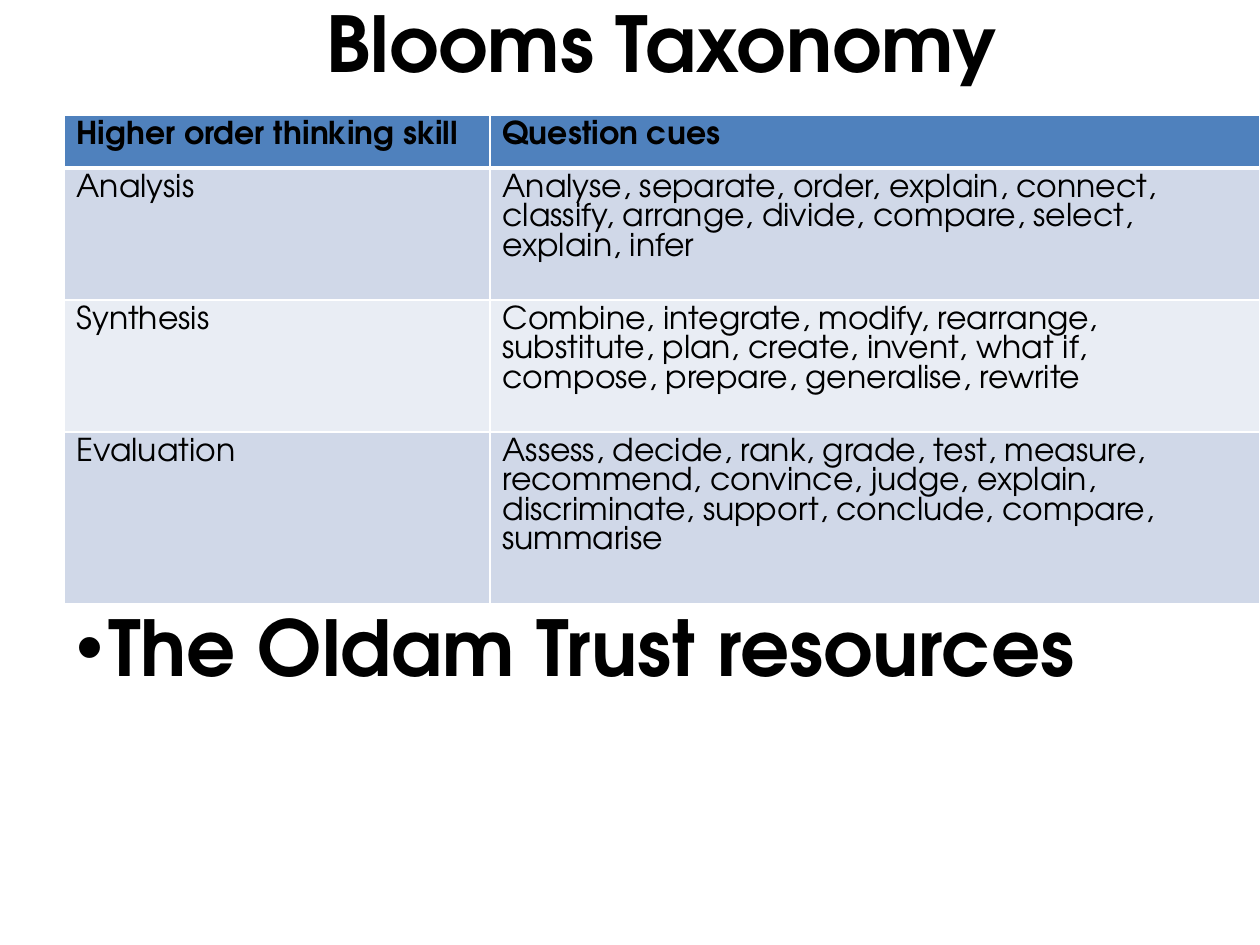
import pptx
import pptx.util
import pptx.dml.color
import pptx.enum.text
import lxml.etree

# Content
TITLE = "Blooms Taxonomy"
BULLET = "The Oldam Trust resources"
ROWS = [
    ("Higher order thinking skill", "Question cues"),
    ("Analysis", "Analyse, separate, order, explain, connect, classify, "
     "arrange, divide, compare, select, explain, infer"),
    ("Synthesis", "Combine, integrate, modify, rearrange, substitute, plan, "
     "create, invent, what if, compose, prepare, generalise, rewrite"),
    ("Evaluation", "Assess, decide, rank, grade, test, measure, recommend, "
     "convince, judge, explain, discriminate, support, conclude, compare, "
     "summarise"),
]

# Look and layout, in px
FONT = "TeX Gyre Adventor"
COLORS = {"text": "000000", "head": "4F81BD", "odd": "D0D8E8",
          "even": "E9EDF4", "line": "FFFFFF"}
LEFT, WIDE = 64, 1196
COLS = (426, 770)
HIGH = (53, 132, 132, 172)
TABLE_TOP, LIST_TOP, TEXT_HIGH = 115, 604, 100
ALIGN = pptx.enum.text.PP_ALIGN


def px(n):
    return pptx.util.Emu(round(n * 914400 / 126))


def rgb(name):
    return pptx.dml.color.RGBColor.from_string(COLORS[name])


def style(par, size, bold, space):
    par.line_spacing = space
    par.space_before = pptx.util.Pt(0)
    for run in par.runs:
        run.font.name = FONT
        run.font.size = pptx.util.Pt(size)
        run.font.bold = bold
        run.font.color.rgb = rgb("text")


def put(shape, top, text, align):
    shape.left, shape.top = px(LEFT), px(top)
    shape.width, shape.height = px(WIDE), px(TEXT_HIGH)
    frame = shape.text_frame
    frame.text = text
    frame.word_wrap = True
    frame.auto_size = pptx.enum.text.MSO_AUTO_SIZE.NONE
    frame.vertical_anchor = pptx.enum.text.MSO_ANCHOR.TOP
    par = frame.paragraphs[0]
    par.alignment = align
    style(par, 44, True, 0.9)
    return par


def edge(cell, under):
    props = cell._tc.get_or_add_tcPr()
    for i, side in enumerate(("lnL", "lnR", "lnT", "lnB")):
        width = under if side == "lnB" else 1
        line = pptx.oxml.parse_xml(
            f'<a:{side} xmlns:a="{pptx.oxml.ns.nsuri("a")}" '
            f'w="{pptx.util.Pt(width)}"><a:solidFill><a:srgbClr '
            f'val="{COLORS["line"]}"/></a:solidFill></a:{side}>')
        props.insert(i, line)


deck = pptx.Presentation()
deck.slide_width, deck.slide_height = px(1260), px(945)
slide = deck.slides.add_slide(deck.slide_layouts[1])

# Title and bullet
put(slide.shapes.title, 0, TITLE, ALIGN.CENTER)
par = put(slide.placeholders[1], LIST_TOP, BULLET, ALIGN.LEFT)
props = par._p.get_or_add_pPr()
props.set("marL", str(pptx.util.Inches(0.25)))
props.set("indent", str(pptx.util.Inches(-0.25)))
mark = lxml.etree.SubElement(props, pptx.oxml.ns.qn("a:buChar"))
mark.set("char", "•")

# Table of skills and cues
table = slide.shapes.add_table(len(ROWS), len(COLS), px(LEFT), px(TABLE_TOP),
                               px(WIDE), px(sum(HIGH))).table
for col, width in zip(table.columns, COLS):
    col.width = px(width)
for r, (row, high) in enumerate(zip(ROWS, HIGH)):
    table.rows[r].height = px(high)
    head = r == 0
    fill = "head" if head else "odd" if r % 2 else "even"
    for c, text in enumerate(row):
        cell = table.cell(r, c)
        cell.text_frame.text = text
        style(cell.text_frame.paragraphs[0], 18, head, 1.0)
        cell.fill.solid()
        cell.fill.fore_color.rgb = rgb(fill)
        edge(cell, 3 if head else 1)

deck.save("out.pptx")
